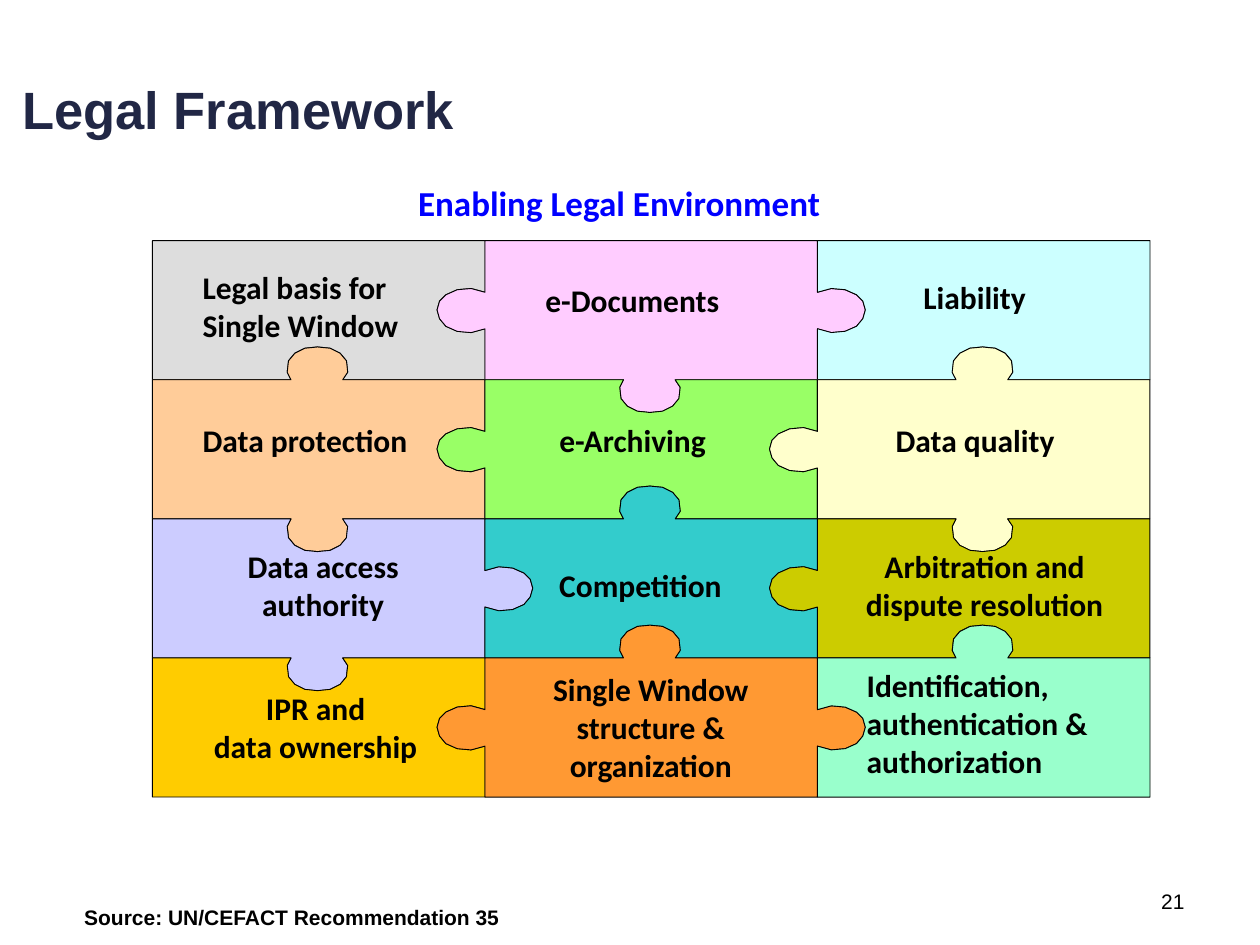
from dataclasses import dataclass

from pptx import Presentation
from pptx.dml.color import RGBColor
from pptx.enum.text import MSO_ANCHOR as Anchor, MSO_AUTO_SIZE as AutoSize, PP_ALIGN as Align
from pptx.slide import Slide
from pptx.util import Inches, Pt

COLORS = {
    "black": "000000", "navy": "212745", "blue": "0000FF",
    "grey": "DDDDDD", "pink": "FFCCFF", "ice": "CCFFFF",
    "peach": "FFCC99", "green": "99FF66", "cream": "FFFFCC",
    "lavender": "CCCCFF", "teal": "33CCCC", "olive": "CCCC00",
    "amber": "FFCC00", "orange": "FF9933", "mint": "99FFCC",
}

GRID_LEFT, GRID_TOP = 1.21, 1.91
PIECE_WIDTH, PIECE_HEIGHT = 2.64, 1.1
ROW_STEP, COLUMN_STEP = 1.104, 2.639

PIECE_COLORS = [
    ["grey", "pink", "ice"],
    ["peach", "green", "cream"],
    ["lavender", "teal", "olive"],
    ["amber", "orange", "mint"],
]
RIGHTWARD_KNOBS = [[-1, 1], [-1, -1], [1, -1], [-1, 1]]
DOWNWARD_KNOBS = [[-1, 1, -1], [1, -1, 1], [1, -1, -1]]

HORIZONTAL_KNOB = [(-0.21, 0), (-0.24, 0.06), (-0.23, 0.15), (-0.18, 0.21), (-0.1, 0.25), (0, 0.26),
                   (0.1, 0.25), (0.18, 0.21), (0.23, 0.15), (0.24, 0.06), (0.2, 0)]
VERTICAL_KNOB = [(-0.14, 0), (-0.17, 0.11), (-0.16, 0.22), (-0.12, 0.31), (-0.07, 0.36), (0, 0.38),
                 (0.07, 0.36), (0.13, 0.31), (0.17, 0.22), (0.18, 0.11), (0.15, 0)]

Point = tuple[float, float]


@dataclass(frozen=True)
class Label:
    lines: tuple[str, ...]
    left: float
    top: float
    width: float
    height: float
    align: Align = Align.LEFT
    size: int = 18
    font: str = "Calibri"
    color: str = "black"
    bold: bool = True
    wrap: bool = False
    anchor: Anchor = Anchor.TOP
    auto_size: AutoSize = AutoSize.SHAPE_TO_FIT_TEXT


LABELS = [
    Label(("21",), 7.17, 6.95, 2.33, 0.4, Align.RIGHT, 12, "Arial", bold=False,
          wrap=True, anchor=Anchor.MIDDLE, auto_size=AutoSize.NONE),
    Label(("Legal Framework",), 0.08, 0.3, 9, 1.12, size=30, font="Arial", color="navy",
          wrap=True, anchor=Anchor.MIDDLE, auto_size=AutoSize.NONE),
    Label(("Enabling Legal Environment",), 3.22, 1.39, 4, 0.43, size=20, color="blue", wrap=True),
    Label(("Legal basis for", "Single Window"), 1.51, 2.08, 2.03, 0.7),
    Label(("e-Documents",), 4.23, 2.18, 1.78, 0.4),
    Label(("Liability",), 7.23, 2.16, 1.15, 0.4),
    Label(("Data protection",), 1.51, 3.29, 2.03, 0.4),
    Label(("e-Archiving",), 4.34, 3.29, 1.58, 0.4),
    Label(("Data quality",), 7.01, 3.29, 1.62, 0.4),
    Label(("Data access", "authority"), 1.74, 4.29, 1.65, 0.7, Align.CENTER),
    Label(("Competition",), 4.34, 4.44, 1.66, 0.4),
    Label(("Arbitration and", "dispute resolution"), 6.63, 4.29, 2.37, 0.7, Align.CENTER),
    Label(("IPR and", "data ownership"), 1.49, 5.42, 2.03, 0.7, Align.CENTER),
    Label(("Single Window", "structure &", "organization"), 4.14, 5.27, 2.05, 1, Align.CENTER),
    Label(("Identification,", "authentication &", "authorization"), 6.78, 5.24, 2.23, 1),
    Label(("Source: UN/CEFACT Recommendation 35",), 0.57, 7.13, 3.55, 0.3, size=12, font="Arial"),
]


def rgb(name: str) -> RGBColor:
    return RGBColor.from_string(COLORS[name])


def corner(row: int, column: int) -> Point:
    return GRID_LEFT + column * COLUMN_STEP, GRID_TOP + row * ROW_STEP


def horizontal_edge(row: int, column: int) -> list[Point]:
    left, top = corner(row, column)
    knob = []
    if 0 < row < len(PIECE_COLORS):
        sign = DOWNWARD_KNOBS[row - 1][column]
        center = left + PIECE_WIDTH / 2 - 0.01
        knob = [(center + along, top + sign * out) for along, out in HORIZONTAL_KNOB]
    return [(left, top), *knob, corner(row, column + 1)]


def vertical_edge(row: int, column: int) -> list[Point]:
    left, top = corner(row, column)
    knob = []
    if 0 < column < len(PIECE_COLORS[0]):
        sign = RIGHTWARD_KNOBS[row][column - 1]
        center = top + PIECE_HEIGHT / 2
        knob = [(left + sign * out, center + along) for along, out in VERTICAL_KNOB]
    return [(left, top), *knob, corner(row + 1, column)]


def draw_piece(slide: Slide, row: int, column: int, color: str) -> None:
    outline = (horizontal_edge(row, column)
               + vertical_edge(row, column + 1)[1:]
               + horizontal_edge(row + 1, column)[-2::-1]
               + vertical_edge(row, column)[-2:0:-1])
    points = [(Inches(x), Inches(y)) for x, y in outline]
    builder = slide.shapes.build_freeform(*points[0])
    builder.add_line_segments(points[1:], close=True)
    shape = builder.convert_to_shape()
    shape.shadow.inherit = False
    shape.fill.solid()
    shape.fill.fore_color.rgb = rgb(color)
    shape.line.color.rgb = rgb("black")
    shape.line.width = Pt(0.5)


def draw_label(slide: Slide, label: Label) -> None:
    box = slide.shapes.add_textbox(Inches(label.left), Inches(label.top),
                                   Inches(label.width), Inches(label.height))
    frame = box.text_frame
    frame_format = {"word_wrap": label.wrap, "auto_size": label.auto_size,
                    "vertical_anchor": label.anchor}
    for name, value in frame_format.items():
        setattr(frame, name, value)
    frame.text = "\n".join(label.lines)
    font_format = {"name": label.font, "size": Pt(label.size), "bold": label.bold}
    for paragraph in frame.paragraphs:
        paragraph.alignment = label.align
        font = paragraph.runs[0].font
        for name, value in font_format.items():
            setattr(font, name, value)
        font.color.rgb = rgb(label.color)


def main() -> None:
    presentation = Presentation()
    presentation.slide_width = Inches(10)
    presentation.slide_height = Inches(7.5)
    slide = presentation.slides.add_slide(presentation.slide_layouts[6])
    for row, colors in enumerate(PIECE_COLORS):
        for column, color in enumerate(colors):
            draw_piece(slide, row, column, color)
    for label in LABELS:
        draw_label(slide, label)
    presentation.save("out.pptx")


if __name__ == "__main__":
    main()
